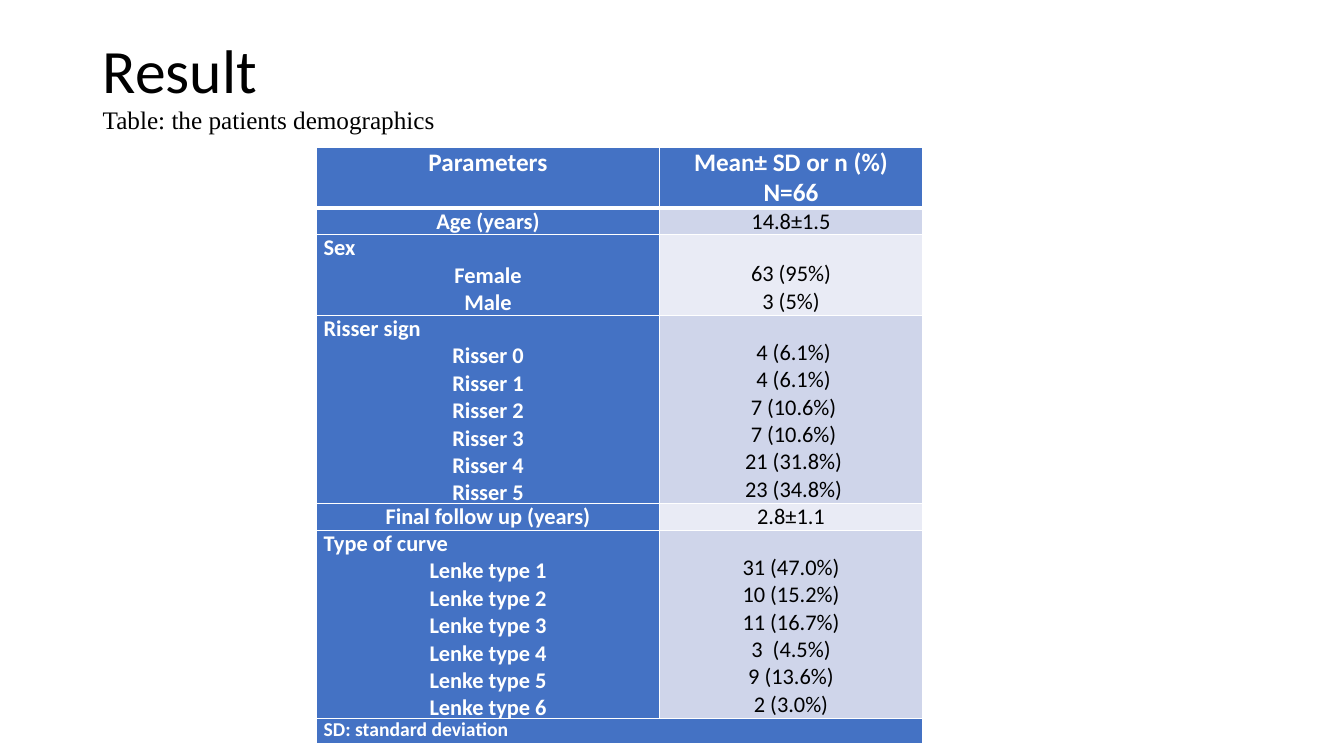
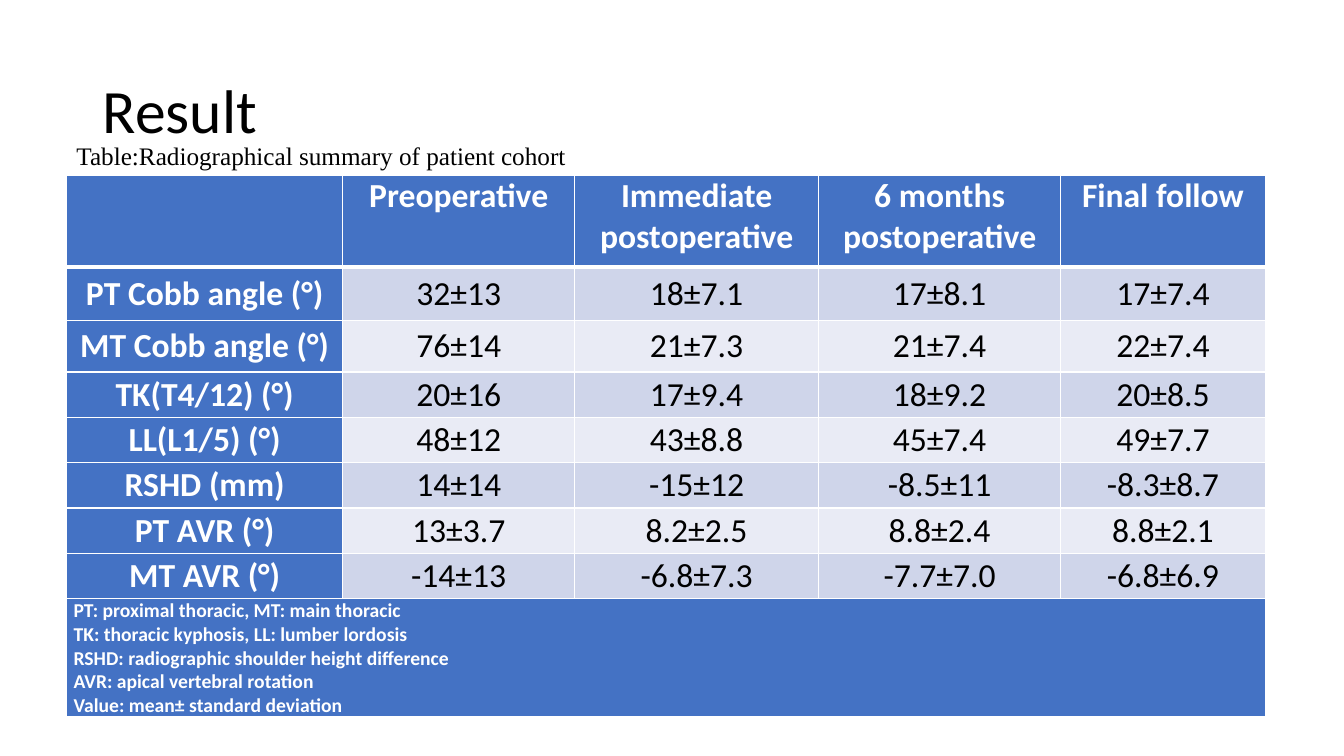
from dataclasses import dataclass

import pptx
import pptx.dml.color
import pptx.enum.text
import pptx.oxml
import pptx.oxml.ns
import pptx.util

Inches, Pt = pptx.util.Inches, pptx.util.Pt
Align = pptx.enum.text.PP_ALIGN
Anchor = pptx.enum.text.MSO_ANCHOR


@dataclass(frozen=True)
class Theme:
    sans: str = "Calibri"
    serif: str = "Times New Roman"
    ink: str = "000000"
    white: str = "FFFFFF"
    head: str = "4472C4"
    bands: tuple = ("E9EBF5", "CFD5EA")
    title: int = 44
    caption: int = 18
    note: int = 14
    thin: int = 1
    thick: int = 3


THEME = Theme()

# Content: a label of several lines is a group heading with its members
SLIDES = [
    dict(
        title="Result", title_top=0,
        caption="Table: the patients demographics", caption_at=(0.92, 0.99),
        table_at=(3.14, 1.46), sizes=(18, 16),
        cols=[3.4, 2.61], heights=[0.57, 0.26, 0.77, 1.79, 0.26, 1.79, 0.25],
        rows=[
            ("Parameters", "Mean± SD or n (%) N=66"),
            ("Age (years)", "14.8±1.5"),
            ("Sex\nFemale\nMale", "63 (95%)\n3 (5%)"),
            ("Risser sign\nRisser 0\nRisser 1\nRisser 2\nRisser 3\nRisser 4\nRisser 5",
             " 4 (6.1%)\n 4 (6.1%)\n 7 (10.6%)\n 7 (10.6%)\n 21 (31.8%)\n 23 (34.8%)"),
            ("Final follow up (years)", "2.8±1.1"),
            ("Type of curve\nLenke type 1\nLenke type 2\nLenke type 3\n"
             "Lenke type 4\nLenke type 5\nLenke type 6",
             "31 (47.0%)\n10 (15.2%)\n11 (16.7%)\n3  (4.5%)\n9 (13.6%)\n2 (3.0%)"),
        ],
        note="SD: standard deviation",
    ),
    dict(
        title="Result", title_top=0.4,
        caption="Table:Radiographical summary of patient cohort", caption_at=(0.66, 1.34),
        table_at=(0.66, 1.74), sizes=(24, 24),
        cols=[2.74, 2.3, 2.42, 2.4, 2.03],
        heights=[0.91, 0.53, 0.51] + [0.45] * 5 + [1.17],
        rows=[
            ("", "Preoperative", "Immediate postoperative",
             "6 months postoperative", "Final follow"),
            ("PT Cobb angle (°)", "32±13", "18±7.1", "17±8.1", "17±7.4"),
            ("MT Cobb angle (°)", "76±14", "21±7.3", "21±7.4", "22±7.4"),
            ("TK(T4/12) (°)", "20±16", "17±9.4", "18±9.2", "20±8.5"),
            ("LL(L1/5) (°)", "48±12", "43±8.8", "45±7.4", "49±7.7"),
            ("RSHD (mm)", "14±14", "-15±12", "-8.5±11", "-8.3±8.7"),
            ("PT AVR (°)", "13±3.7", "8.2±2.5", "8.8±2.4", "8.8±2.1"),
            ("MT AVR (°)", "-14±13", "-6.8±7.3", "-7.7±7.0", "-6.8±6.9"),
        ],
        note="PT: proximal thoracic, MT: main thoracic\n"
             "TK: thoracic kyphosis, LL: lumber lordosis\n"
             "RSHD: radiographic shoulder height difference\n"
             "AVR: apical vertebral rotation\n"
             "Value: mean± standard deviation",
    ),
]


def color(code):
    return pptx.dml.color.RGBColor.from_string(code)


def style(frame, size, ink=THEME.ink, face=THEME.sans, bold=False, align=Align.LEFT):
    for para in frame.paragraphs:
        para.alignment = align
        for run in para.runs:
            font = run.font
            font.size, font.name, font.bold = Pt(size), face, bold
            font.color.rgb = color(ink)


# Slide parts
def add_title(slide, text, top):
    title = slide.shapes.title
    title.left, title.top = Inches(0.92), Inches(top)
    title.width, title.height = Inches(11.5), Inches(1.45)
    frame = title.text_frame
    frame.text = text
    frame.vertical_anchor = Anchor.MIDDLE
    frame.auto_size = pptx.enum.text.MSO_AUTO_SIZE.NONE
    frame.paragraphs[0].line_spacing = 0.9
    style(frame, THEME.title)


def add_caption(slide, text, spot):
    left, top = map(Inches, spot)
    box = slide.shapes.add_textbox(left, top, Inches(11.89), Inches(0.4))
    frame = box.text_frame
    frame.word_wrap = True
    frame.text = text
    style(frame, THEME.caption, face=THEME.serif, align=Align.JUSTIFY)


# Table
def add_rules(cell, top, bottom):
    props = cell._tc.get_or_add_tcPr()
    space = pptx.oxml.ns.nsdecls("a")
    for side, width in zip("LRTB", (THEME.thin, THEME.thin, top, bottom)):
        props.append(pptx.oxml.parse_xml(
            f'<a:ln{side} {space} w="{Pt(width)}"><a:solidFill>'
            f'<a:srgbClr val="{THEME.white}"/></a:solidFill></a:ln{side}>'))


def fill_cell(cell, text, fill, anchor, top=THEME.thin, bottom=THEME.thin, **look):
    add_rules(cell, top, bottom)
    cell.fill.solid()
    cell.fill.fore_color.rgb = color(fill)
    cell.margin_left = cell.margin_right = Inches(0.07)
    cell.margin_top = cell.margin_bottom = 0
    cell.vertical_anchor = anchor
    cell.text_frame.text = text
    style(cell.text_frame, **look)


def add_grid(slide, data):
    cols, heights = data["cols"], data["heights"]
    left, top = data["table_at"]
    grid = slide.shapes.add_table(
        len(heights), len(cols), Inches(left), Inches(top),
        Inches(sum(cols)), Inches(sum(heights))).table
    for col, width in zip(grid.columns, cols):
        col.width = Inches(width)
    for row, height in zip(grid.rows, heights):
        row.height = Inches(height)

    strong = dict(ink=THEME.white, bold=True)
    head_size, body_size = data["sizes"]
    for r, row in enumerate(data["rows"]):
        group = "\n" in row[0]
        top_rule = THEME.thick if r == 1 else THEME.thin
        for c, text in enumerate(row):
            cell = grid.cell(r, c)
            if r == 0:
                fill_cell(cell, text, THEME.head, Anchor.TOP, bottom=THEME.thick,
                          size=head_size, align=Align.CENTER, **strong)
            elif c == 0:
                fill_cell(cell, text, THEME.head, Anchor.MIDDLE, top=top_rule,
                          size=body_size, align=Align.CENTER, **strong)
                if group:
                    cell.text_frame.paragraphs[0].alignment = Align.LEFT
            else:
                # Group values sit level with the members below the heading
                fill_cell(cell, text, THEME.bands[r % 2],
                          Anchor.BOTTOM if group else Anchor.MIDDLE, top=top_rule,
                          size=body_size, align=Align.CENTER)

    last = len(heights) - 1
    note = grid.cell(last, 0)
    note.merge(grid.cell(last, len(cols) - 1))
    fill_cell(note, data["note"], THEME.head, Anchor.TOP, size=THEME.note, **strong)


def main():
    deck = pptx.Presentation()
    deck.slide_width, deck.slide_height = Inches(13.33), Inches(7.5)
    for data in SLIDES:
        slide = deck.slides.add_slide(deck.slide_layouts.get_by_name("Title Only"))
        add_title(slide, data["title"], data["title_top"])
        add_caption(slide, data["caption"], data["caption_at"])
        add_grid(slide, data)
    deck.save("out.pptx")


if __name__ == "__main__":
    main()
